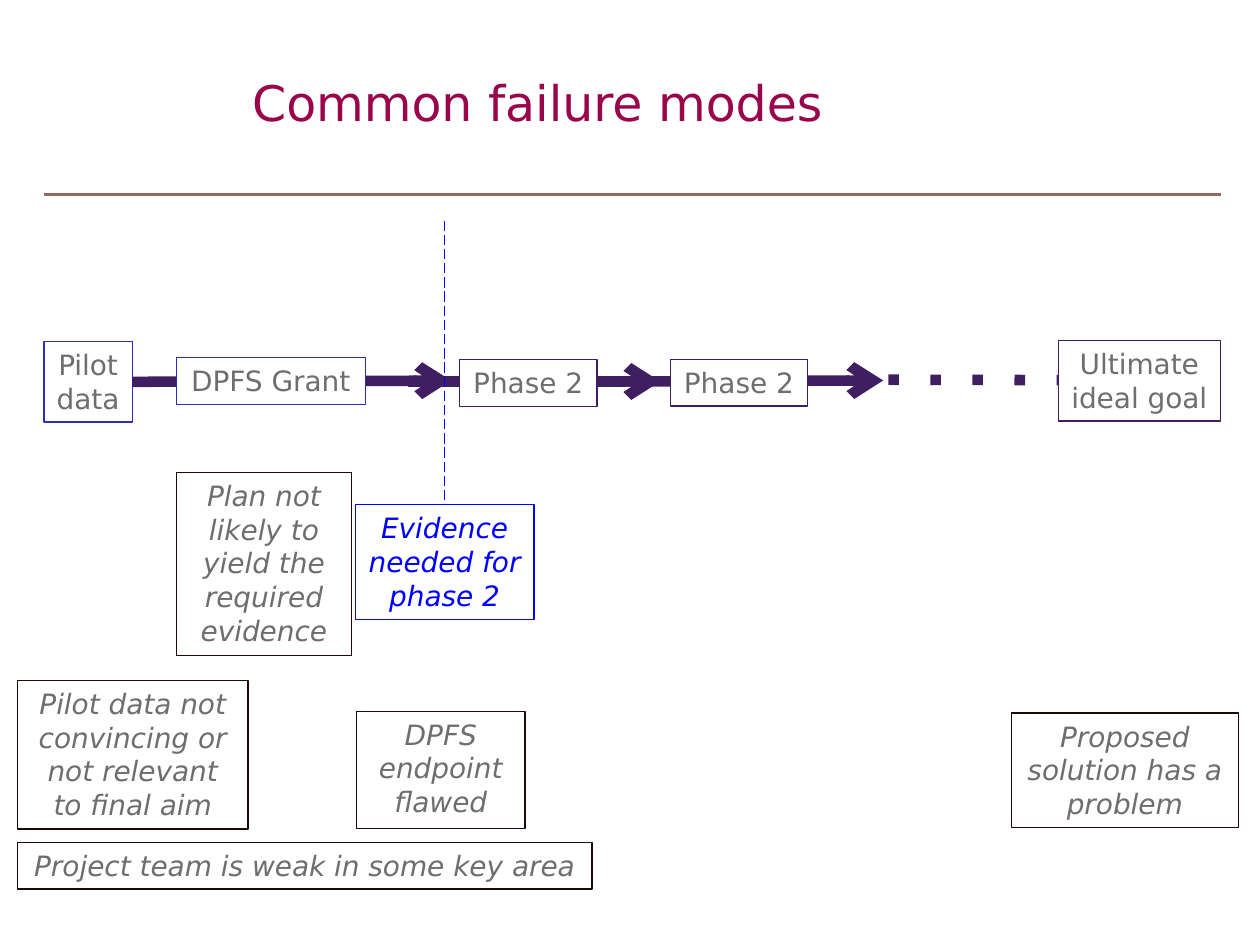
"""Build the slide on common failure modes along a project timeline."""
from dataclasses import dataclass
from typing import Any, Optional, Union

from lxml.etree import SubElement
from pptx import Presentation
from pptx.dml.color import RGBColor as RGB
from pptx.enum.shapes import MSO_CONNECTOR as CONNECTOR
from pptx.enum.text import MSO_ANCHOR as ANCHOR, MSO_AUTO_SIZE as AUTO, PP_ALIGN as ALIGN
from pptx.oxml.ns import qn
from pptx.util import Pt

COLORS = {
    "title": "9A044B", "rule": "91695F", "text": "6E6E6F", "evidence": "0000FF",
    "grant": "2D2DB9", "path": "3F1E61", "failure": "1B0807",
}
TITLE_FONT = {"name": "DejaVu Sans", "size": Pt(28), "bold": False}
STEP_FONT = {"name": "DejaVu Sans", "size": Pt(16)}
FAILURE_FONT = {**STEP_FONT, "italic": True}
FRAME = {"auto_size": AUTO.SHAPE_TO_FIT_TEXT, "vertical_anchor": ANCHOR.TOP}


@dataclass(frozen=True)
class Box:
    left: float
    top: float
    width: float
    height: float
    text: str
    border: str = "failure"
    color: str = "text"
    step: bool = False
    filled: bool = False


@dataclass(frozen=True)
class Line:
    start: tuple[float, float]
    end: tuple[float, float]
    color: str = "path"
    weight: float = 6
    dash: Optional[str] = None
    arrow: bool = False


PARTS: list[Union[Box, Line]] = [
    Line((25.2, 111.4), (697.6, 111.4), "rule", 1.75),
    Box(25.2, 195.1, 50.4, 46.1, "Pilot\ndata", "grant", step=True, filled=True),
    Line((75.6, 218.2), (257.8, 217.5), arrow=True),
    Box(100.8, 204.5, 108, 26.6, "DPFS Grant", "grant", step=True, filled=True),
    Box(604.8, 194.5, 92.5, 46.1, "Ultimate\nideal goal", "path", step=True),
    Line((233.3, 218), (377.3, 218), arrow=True),
    Box(262.6, 205.6, 78.5, 26.6, "Phase 2", "path", step=True, filled=True),
    Line((357.8, 218), (504.7, 217.4), arrow=True),
    Box(383, 205.4, 78.5, 26.6, "Phase 2", "path", step=True, filled=True),
    Line((507.6, 217), (604.8, 217.2), dash="dot"),
    Box(203, 288.4, 102.2, 65.5, "Evidence needed for phase 2", "evidence", "evidence"),
    Line((254.2, 126), (254.2, 288.4), "evidence", 0.75, "lgDash"),
    Box(578, 407.5, 129.6, 65.5, "Proposed solution has a problem"),
    Box(10, 388.8, 131.8, 85, "Pilot data not convincing or not relevant to final aim"),
    Box(203.8, 406.4, 96.2, 67.2, "DPFS endpoint flawed"),
    Box(100.8, 270, 100.1, 104.4, "Plan not likely to yield the required evidence"),
    Box(10, 481.4, 328.3, 26.6, "Project team is weak in some key area"),
]


def rgb(name: str) -> RGB:
    """Look up a named colour."""
    return RGB.from_string(COLORS[name])


def apply(target: Any, values: dict[str, Any]) -> None:
    """Set each format value on the target."""
    for name, value in values.items():
        setattr(target, name, value)


def write(frame: Any, text: str, font: dict[str, Any], color: str) -> None:
    """Fill a text frame with centred paragraphs."""
    frame.text = text
    for paragraph in frame.paragraphs:
        paragraph.alignment = ALIGN.CENTER
        apply(paragraph.font, font)
        paragraph.font.color.rgb = rgb(color)


def draw_box(slide: Any, box: Box) -> None:
    """Draw a bordered box of text."""
    shape = slide.shapes.add_textbox(Pt(box.left), Pt(box.top), Pt(box.width), Pt(box.height))
    if box.filled:
        shape.fill.solid()
        shape.fill.fore_color.rgb = RGB.from_string("FFFFFF")
    shape.line.color.rgb = rgb(box.border)
    shape.line.width = Pt(0.75)
    apply(shape.text_frame, {**FRAME, "word_wrap": not box.step})
    write(shape.text_frame, box.text, STEP_FONT if box.step else FAILURE_FONT, box.color)


def draw_line(slide: Any, line: Line) -> None:
    """Draw a plain, dashed or arrowed line."""
    ends = [Pt(value) for value in (*line.start, *line.end)]
    connector = slide.shapes.add_connector(CONNECTOR.STRAIGHT, *ends)
    connector.line.color.rgb = rgb(line.color)
    connector.line.width = Pt(line.weight)
    properties = connector.element.spPr
    outline = properties.find(qn("a:ln"))
    if line.dash:
        SubElement(outline, qn("a:prstDash"), val=line.dash)
    if line.arrow:
        SubElement(outline, qn("a:tailEnd"), type="arrow")
    SubElement(properties, qn("a:effectLst"))


def main() -> None:
    """Create and save the presentation."""
    deck = Presentation()
    apply(deck, {"slide_width": Pt(720), "slide_height": Pt(540)})
    slide = deck.slides.add_slide(deck.slide_layouts[5])
    title = slide.shapes.title
    apply(title, {"left": Pt(10), "top": Pt(33.1), "width": Pt(594), "height": Pt(50.4)})
    title.text_frame.vertical_anchor = ANCHOR.MIDDLE
    write(title.text_frame, "Common failure modes", TITLE_FONT, "title")
    for part in PARTS:
        if isinstance(part, Box):
            draw_box(slide, part)
        else:
            draw_line(slide, part)
    deck.save("out.pptx")


if __name__ == "__main__":
    main()
